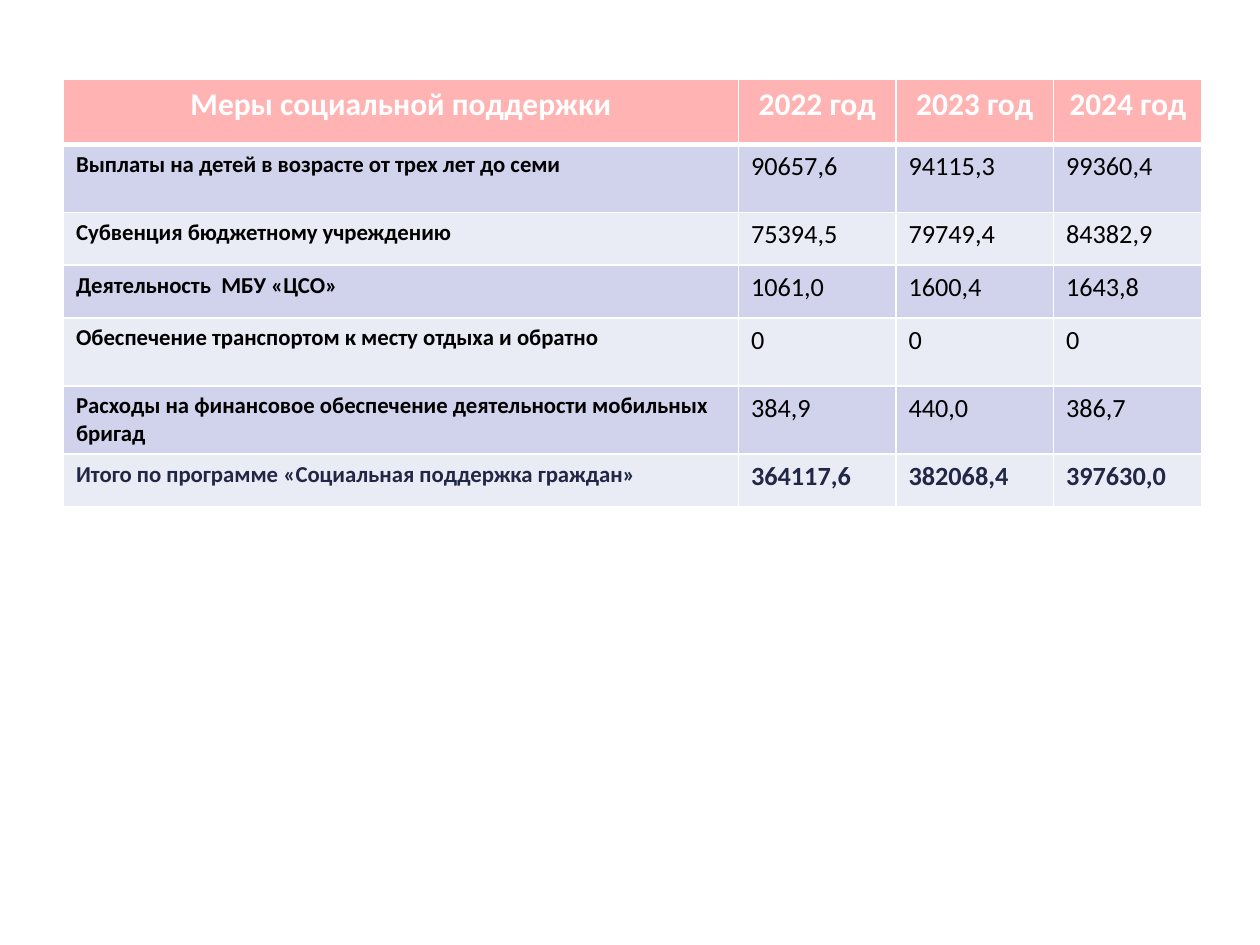
from lxml import etree
from pptx import Presentation
from pptx.dml.color import RGBColor
from pptx.enum.text import PP_ALIGN
from pptx.oxml.ns import qn
from pptx.util import Pt

CENTER, LEFT = PP_ALIGN.CENTER, PP_ALIGN.LEFT
BLANK_LAYOUT = 6
FONT = "Calibri"
COLORS = {
    "white": "FFFFFF",
    "black": "000000",
    "header": "FFB3B3",
    "odd_row": "D0D3EB",
    "even_row": "E9EBF5",
    "total": "212745",
}

HEADINGS = ["Меры социальной поддержки", "2022 год", "2023 год", "2024 год"]
MEASURES = [
    ["Выплаты на детей в возрасте от трех лет до семи", "90657,6", "94115,3", "99360,4"],
    ["Субвенция бюджетному учреждению", "75394,5", "79749,4", "84382,9"],
    ["Деятельность  МБУ «ЦСО»", "1061,0", "1600,4", "1643,8"],
    ["Обеспечение транспортом к месту отдыха и обратно", "0", "0", "0"],
    ["Расходы на финансовое обеспечение деятельности мобильных бригад",
     "384,9", "440,0", "386,7"],
]
TOTAL = ["Итого по программе «Социальная поддержка граждан»",
         "364117,6", "382068,4", "397630,0"]

COLUMN_WIDTHS = [385.7, 90, 90, 85]
HEADER_HEIGHT, TALL, SHORT = 37.4, 38.9, 30.2
ROW_HEIGHTS = [HEADER_HEIGHT, TALL, SHORT, SHORT, TALL, TALL, SHORT]


def write_text(text_frame, text, size, color, bold=False, align=LEFT):
    paragraph = text_frame.paragraphs[0]
    paragraph.alignment = align
    run = paragraph.add_run()
    run.text = text
    run.font.name = FONT
    run.font.size = Pt(size)
    run.font.bold = bold
    run.font.color.rgb = RGBColor.from_string(COLORS[color])


class SlideBuilder:
    def __init__(self, slide):
        self.slide = slide

    def border(self, cell, side, width, color="white"):
        properties = cell._tc.get_or_add_tcPr()
        line = etree.SubElement(properties, qn(f"a:ln{side}"), w=str(Pt(width)))
        fill = etree.SubElement(line, qn("a:solidFill"))
        etree.SubElement(fill, qn("a:srgbClr"), val=COLORS[color])

    def cell(self, cell, text, fill, top=1, bottom=1, **text_format):
        # Borders come before the fill in the cell properties
        for side, width in (("L", 1), ("R", 1), ("T", top), ("B", bottom)):
            self.border(cell, side, width)
        cell.fill.solid()
        cell.fill.fore_color.rgb = RGBColor.from_string(COLORS[fill])
        write_text(cell.text_frame, text, **text_format)

    def table(self, left, top, column_widths, row_heights):
        frame = self.slide.shapes.add_table(
            len(row_heights), len(column_widths), Pt(left), Pt(top),
            Pt(sum(column_widths)), Pt(sum(row_heights)))
        table = frame.table
        for column, width in zip(table.columns, column_widths):
            column.width = Pt(width)
        for row, height in zip(table.rows, row_heights):
            row.height = Pt(height)
        return table


def main():
    presentation = Presentation()
    presentation.slide_width, presentation.slide_height = Pt(720), Pt(540)
    slide = presentation.slides.add_slide(presentation.slide_layouts[BLANK_LAYOUT])
    builder = SlideBuilder(slide)
    table = builder.table(36.3, 45, COLUMN_WIDTHS, ROW_HEIGHTS)

    # Header row
    for column, heading in enumerate(HEADINGS):
        builder.cell(table.cell(0, column), heading, "header", bottom=3,
                     size=18, color="white", bold=True, align=CENTER)

    # Support measures and the total
    rows = MEASURES + [TOTAL]
    for row, values in enumerate(rows, start=1):
        is_total = row == len(rows)
        for column, value in enumerate(values):
            is_label = column == 0
            builder.cell(table.cell(row, column), value,
                         "odd_row" if row % 2 else "even_row",
                         top=3 if row == 1 else 1,
                         size=13 if is_label else 15,
                         color="total" if is_total else "black",
                         bold=is_label or is_total)

    presentation.save("out.pptx")


if __name__ == "__main__":
    main()
